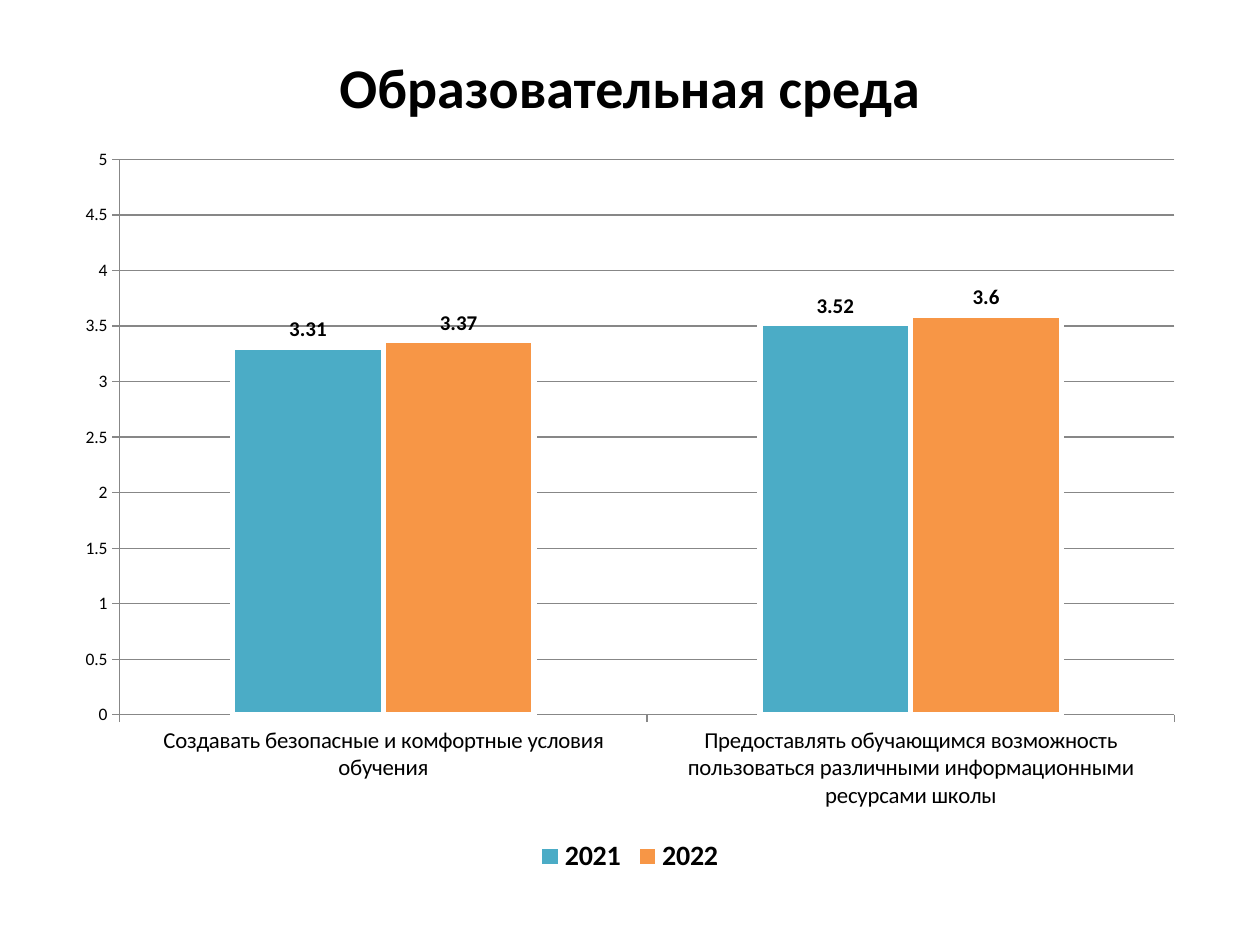
from dataclasses import dataclass

from pptx import Presentation
from pptx.chart.data import CategoryChartData
from pptx.dml.color import RGBColor
from pptx.enum.chart import XL_CHART_TYPE, XL_LABEL_POSITION, XL_LEGEND_POSITION, XL_TICK_MARK
from pptx.enum.text import MSO_ANCHOR, PP_ALIGN
from pptx.util import Pt

COLUMNS = XL_CHART_TYPE.COLUMN_CLUSTERED
LABELS_ABOVE = XL_LABEL_POSITION.OUTSIDE_END
LEGEND_BELOW = XL_LEGEND_POSITION.BOTTOM
TICK_OUTSIDE, TICK_NONE = XL_TICK_MARK.OUTSIDE, XL_TICK_MARK.NONE
MIDDLE, CENTER = MSO_ANCHOR.MIDDLE, PP_ALIGN.CENTER


@dataclass(frozen=True)
class Theme:
    font: str = "Calibri"
    text: str = "000000"
    bar_outline: str = "FFFFFF"
    grid: str = "878787"
    series: tuple = ("4BACC6", "F79646")
    title_size: int = 32
    legend_size: int = 16
    category_size: int = 13
    label_size: int = 12
    axis_size: int = 10


def format_font(font, theme, size, bold=False):
    font.name = theme.font
    font.size = Pt(size)
    font.bold = bold
    font.color.rgb = RGBColor.from_string(theme.text)


def write_text(text_frame, text, *, theme, size, bold=False, align=CENTER):
    paragraph = text_frame.paragraphs[0]
    paragraph.alignment = align
    run = paragraph.add_run()
    run.text = text
    format_font(run.font, theme, size, bold)


def format_line(line, color, width):
    line.color.rgb = RGBColor.from_string(color)
    line.width = Pt(width)


class SlideBuilder:
    def __init__(self, slide, theme):
        self.slide = slide
        self.theme = theme

    def title(self, text, left, top, width, height):
        shape = self.slide.shapes.add_textbox(Pt(left), Pt(top), Pt(width), Pt(height))
        text_frame = shape.text_frame
        text_frame.word_wrap = True
        text_frame.vertical_anchor = MIDDLE
        write_text(text_frame, text, theme=self.theme, size=self.theme.title_size, bold=True)

    def column_chart(self, categories, series_values, left, top, width, height, maximum, step):
        theme = self.theme
        data = CategoryChartData()
        data.categories = categories
        for name, values in series_values.items():
            data.add_series(name, values)
        chart = self.slide.shapes.add_chart(
            COLUMNS, Pt(left), Pt(top), Pt(width), Pt(height), data).chart
        chart.has_title = False
        format_font(chart.font, theme, theme.axis_size)

        # Legend
        chart.has_legend = True
        chart.legend.position = LEGEND_BELOW
        chart.legend.include_in_layout = False
        format_font(chart.legend.font, theme, theme.legend_size, bold=True)

        # Axes and grid
        axis_sizes = ((chart.category_axis, theme.category_size),
                      (chart.value_axis, theme.axis_size))
        for axis, size in axis_sizes:
            axis.major_tick_mark = TICK_OUTSIDE
            axis.minor_tick_mark = TICK_NONE
            format_font(axis.tick_labels.font, theme, size)
            format_line(axis.format.line, theme.grid, 0.75)
        value_axis = chart.value_axis
        value_axis.minimum_scale = 0
        value_axis.maximum_scale = maximum
        value_axis.major_unit = step
        value_axis.has_major_gridlines = True
        format_line(value_axis.major_gridlines.format.line, theme.grid, 0.75)

        # Columns and their values
        plot = chart.plots[0]
        plot.gap_width = 150
        plot.overlap = 0
        plot.vary_by_categories = False
        for series, color in zip(plot.series, theme.series):
            series.format.fill.solid()
            series.format.fill.fore_color.rgb = RGBColor.from_string(color)
            format_line(series.format.line, theme.bar_outline, 3)
            labels = series.data_labels
            labels.show_value = True
            labels.position = LABELS_ABOVE
            format_font(labels.font, theme, theme.label_size, bold=True)


def main():
    presentation = Presentation()
    presentation.slide_width, presentation.slide_height = Pt(720), Pt(540)
    slide = presentation.slides.add_slide(presentation.slide_layouts[6])
    builder = SlideBuilder(slide, Theme())

    margin, content_width = 36, 648
    builder.title("Образовательная среда", margin, 21.6, content_width, 55.4)
    builder.column_chart(
        ["Создавать безопасные и комфортные условия обучения",
         "Предоставлять обучающимся возможность пользоваться "
         "различными информационными ресурсами школы"],
        {"2021": (3.31, 3.52), "2022": (3.37, 3.6)},
        margin, 77, content_width, 425.5, maximum=5, step=0.5)

    presentation.save("out.pptx")


if __name__ == "__main__":
    main()
